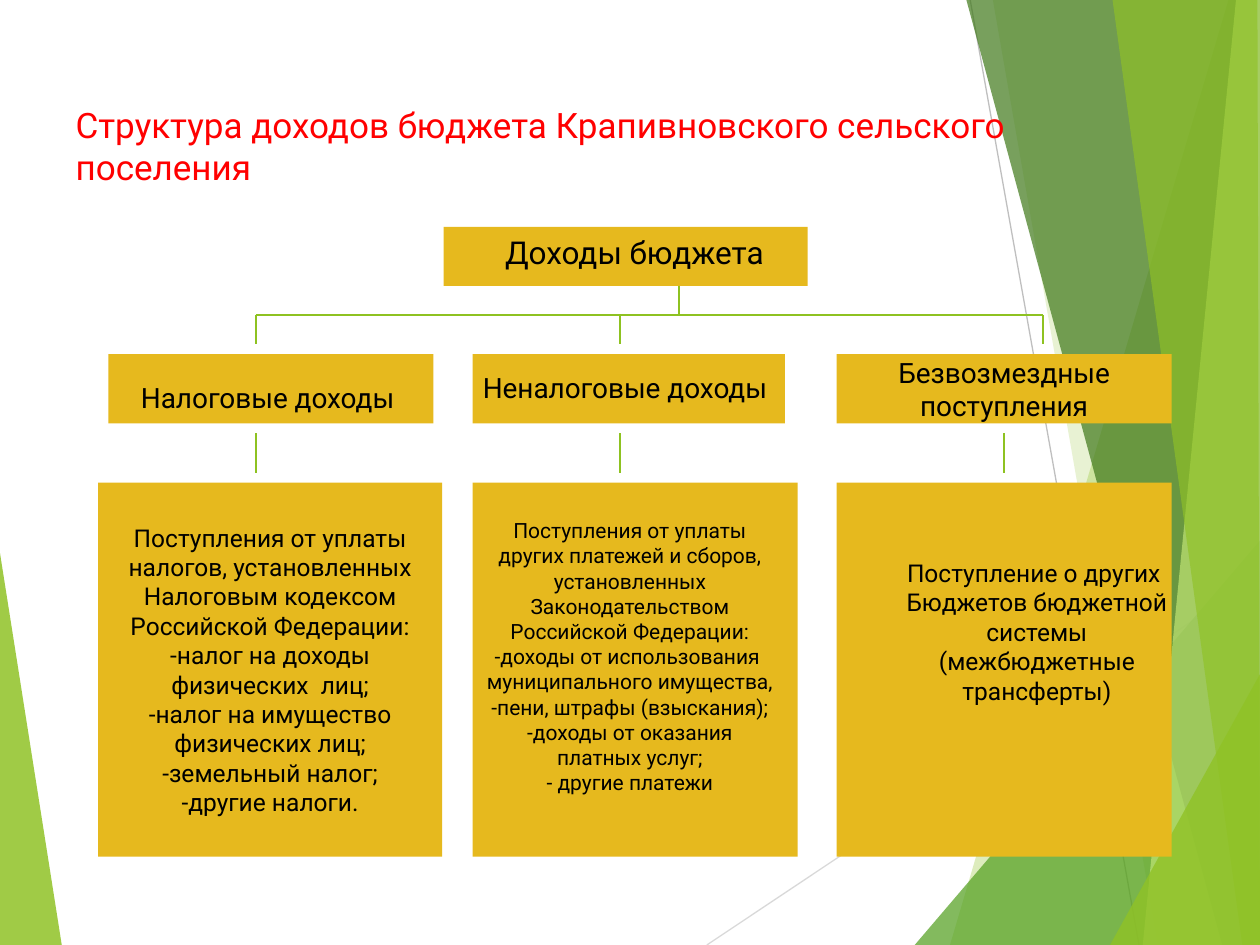
from dataclasses import dataclass

from lxml import etree
from pptx import Presentation
from pptx import util as u
from pptx.dml.color import RGBColor
from pptx.enum import shapes, text
from pptx.oxml.ns import qn


@dataclass(frozen=True)
class Theme:
    font: str = "Roboto"
    title: str = "FF0000"
    ink: str = "000000"
    box: str = "E6B91E"
    branch: str = "8EC221"
    title_size: int = 20
    root_size: int = 18
    head_size: int = 16
    body_size: int = 14
    small_size: int = 12


THEME = Theme()
WIDTH, HEIGHT = 10, 7.5

# Content
TITLE = "Структура доходов бюджета Крапивновского сельского поселения"
ROOT = "Доходы бюджета"
HEADS = ["Налоговые доходы", "Неналоговые доходы", "Безвозмездные поступления"]
TAXES = [
    "Поступления от уплаты налогов, установленных Налоговым кодексом Российской Федерации:",
    "-налог на доходы физических  лиц;",
    "-налог на имущество физических лиц;",
    "-земельный налог;",
    "-другие налоги.",
]
OTHER_INCOME = [
    "Поступления от уплаты других платежей и сборов, установленных "
    "Законодательством Российской Федерации:",
    "-доходы от использования  муниципального имущества,",
    "-пени, штрафы (взыскания);",
    "-доходы от оказания платных услуг;",
    "- другие платежи",
]
TRANSFERS = ["Поступление о других ", "Бюджетов бюджетной системы", "(межбюджетные трансферты)"]

# Grid: rows as (top, height), columns as (left, width)
ROOT_ROW, HEAD_ROW, BODY_ROW = (1.8, 0.47), (2.81, 0.55), (3.83, 2.97)
ROOT_COLUMN = (3.52, 2.89)
HEAD_COLUMNS = [(0.86, 2.58), (3.75, 2.48), (6.64, 2.66)]
BODY_COLUMNS = [(0.78, 2.73), (3.75, 2.58), (6.64, 2.66)]
TRUNK_X, BAR_Y = 5.39, 2.5
BRANCHES = [2.03, 4.92, 8.28]
STEMS = [2.03, 4.92, 7.97]
GAP = 0.08

# Backdrop: thin lines, then facets as (colour, opacity in percent, corners)
RAYS = [("D9D9D9", (5.61, HEIGHT), (WIDTH, 4.57)), ("BFBFBF", (7.7, 0), (9.04, HEIGHT))]
LEFT_FACET = ("90C226", 85, [(0, 4.39), (0.49, HEIGHT), (0, HEIGHT)])
RIGHT_FACETS = [
    ("90C226", 30, [(9.75, 0), (7.54, HEIGHT), (WIDTH, HEIGHT), (WIDTH, 0)]),
    ("90C226", 20, [(7.88, 0), (9.19, HEIGHT), (WIDTH, HEIGHT), (WIDTH, 0)]),
    ("54A021", 72, [(7.26, HEIGHT), (WIDTH, 4.29), (WIDTH, HEIGHT)]),
    ("3F7819", 70, [(7.67, 0), (9.7, HEIGHT), (WIDTH, HEIGHT), (WIDTH, 0)]),
    ("C0E474", 70, [(9.81, 0), (9.07, HEIGHT), (WIDTH, HEIGHT), (WIDTH, 0)]),
    ("90C226", 65, [(8.83, 0), (9.86, HEIGHT), (WIDTH, HEIGHT), (9.98, 0)]),
    ("90C226", 80, [(8.81, HEIGHT), (WIDTH, 5.35), (WIDTH, HEIGHT)]),
]


def paint(shape, colour, opacity=100):
    shape.shadow.inherit = False
    shape.line.fill.background()
    shape.fill.solid()
    shape.fill.fore_color.rgb = RGBColor.from_string(colour)
    if opacity < 100:
        fill = shape.fill._xPr.find(qn("a:solidFill"))
        etree.SubElement(fill[0], qn("a:alpha"), val=str(opacity * 1000))


def add_facet(slide, colour, opacity, corners):
    points = [(u.Inches(x), u.Inches(y)) for x, y in corners]
    builder = slide.shapes.build_freeform(*points[0])
    builder.add_line_segments(points[1:], close=True)
    paint(builder.convert_to_shape(), colour, opacity)


def add_line(slide, start, end, colour=THEME.branch, weight=1):
    line = slide.shapes.add_connector(
        shapes.MSO_CONNECTOR.STRAIGHT, *(u.Inches(value) for value in (*start, *end)))
    line.line.color.rgb = RGBColor.from_string(colour)
    line.line.width = u.Pt(weight)
    etree.SubElement(line._element.spPr, qn("a:effectLst"))


def write(shape, lines, size, colour=THEME.ink, align=text.PP_ALIGN.CENTER,
          anchor=text.MSO_ANCHOR.TOP):
    frame = shape.text_frame
    frame.text = "\n".join(lines)
    frame.word_wrap = True
    frame.vertical_anchor = anchor
    for paragraph in frame.paragraphs:
        paragraph.alignment = align
        paragraph.font.name = THEME.font
        paragraph.font.size = u.Pt(size)
        paragraph.font.color.rgb = RGBColor.from_string(colour)


def add_box(slide, column, row, lines=(), size=THEME.body_size):
    (left, width), (top, height) = column, row
    box = slide.shapes.add_shape(
        shapes.MSO_SHAPE.RECTANGLE, *map(u.Inches, (left, top, width, height)))
    paint(box, THEME.box)
    if lines:
        write(box, lines, size, anchor=text.MSO_ANCHOR.MIDDLE)


def add_label(slide, area, lines, size, align=text.PP_ALIGN.CENTER):
    write(slide.shapes.add_textbox(*map(u.Inches, area)), lines, size, align=align)


def main():
    presentation = Presentation()
    presentation.slide_width, presentation.slide_height = u.Inches(WIDTH), u.Inches(HEIGHT)
    slide = presentation.slides.add_slide(presentation.slide_layouts[5])

    # Backdrop
    add_facet(slide, *LEFT_FACET)
    for colour, start, end in RAYS:
        add_line(slide, start, end, colour, 0.75)
    for facet in RIGHT_FACETS:
        add_facet(slide, *facet)

    # Title, raised above the backdrop
    title = slide.shapes.title
    title.left, title.top, title.width, title.height = map(u.Inches, (0.5, 0.77, 9, 0.71))
    write(title, [TITLE], THEME.title_size, THEME.title, text.PP_ALIGN.LEFT)
    slide.shapes._spTree.append(title._element)

    # Boxes
    add_box(slide, ROOT_COLUMN, ROOT_ROW)
    for column, lines in zip(HEAD_COLUMNS, [(), (), HEADS[2:]]):
        add_box(slide, column, HEAD_ROW, lines, THEME.head_size)
    for column, lines in zip(BODY_COLUMNS, [TAXES, (), ()]):
        add_box(slide, column, BODY_ROW, lines)

    # Labels laid over the boxes
    left = text.PP_ALIGN.LEFT
    add_label(slide, (3.91, 1.8, 2.42, 0.4), [ROOT], THEME.root_size, left)
    add_label(slide, (1.02, 2.97, 2.42, 0.37), HEADS[:1], THEME.head_size, left)
    add_label(slide, (3.67, 2.89, 2.58, 0.37), HEADS[1:2], THEME.head_size)
    add_label(slide, (3.75, 4.06, 2.5, 2.32), OTHER_INCOME, THEME.small_size)
    add_label(slide, (6.88, 4.38, 2.7, 1.28), TRANSFERS, THEME.body_size)

    # Tree lines
    add_line(slide, (TRUNK_X, sum(ROOT_ROW)), (TRUNK_X, BAR_Y))
    add_line(slide, (BRANCHES[0], BAR_Y), (BRANCHES[-1], BAR_Y))
    for x in BRANCHES:
        add_line(slide, (x, BAR_Y), (x, HEAD_ROW[0] - GAP))
    for x in STEMS:
        add_line(slide, (x, sum(HEAD_ROW) + GAP), (x, BODY_ROW[0] - GAP))

    presentation.save("out.pptx")


if __name__ == "__main__":
    main()
